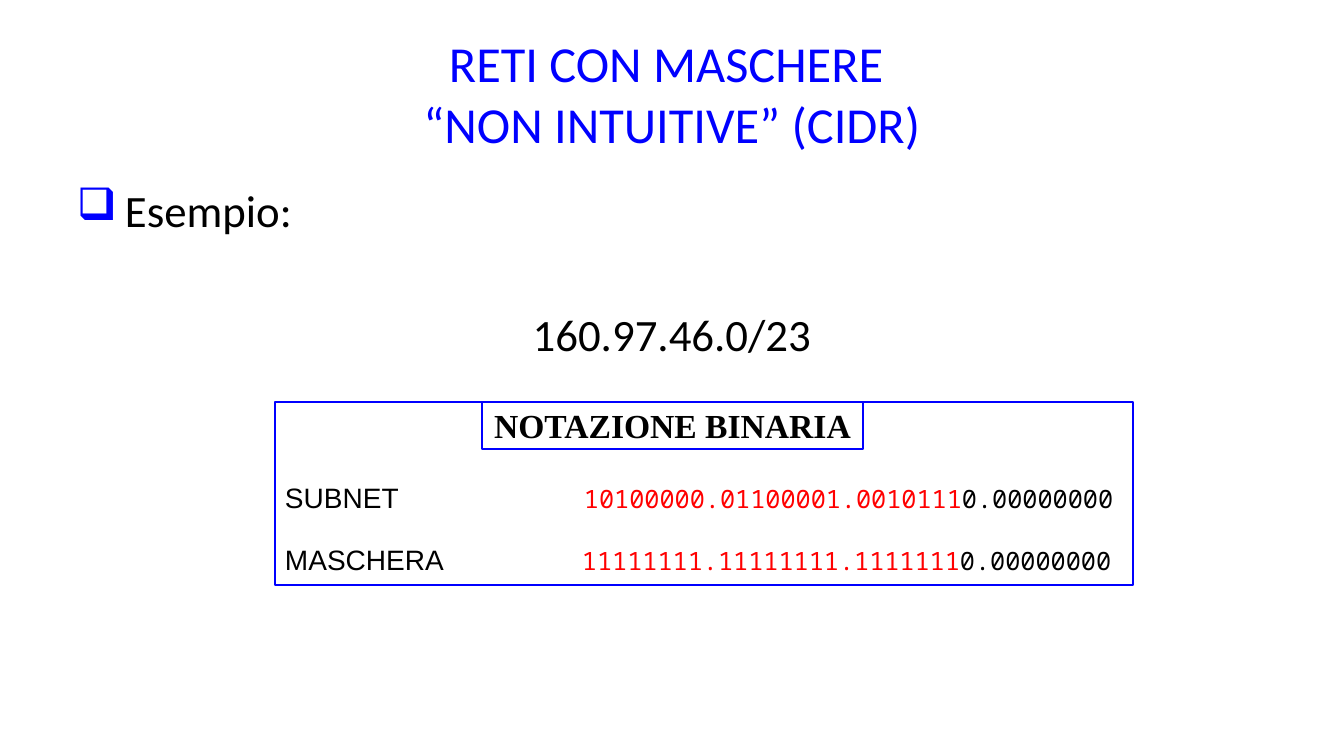
from lxml.etree import SubElement
from pptx import Presentation
from pptx.dml.color import RGBColor
from pptx.enum.shapes import MSO_SHAPE
from pptx.enum.text import MSO_ANCHOR, PP_ALIGN
from pptx.oxml.ns import qn
from pptx.util import Emu, Pt

SCALE = 914400 / 100.8
BLUE, RED, BLACK = "0000FF", "FF0000", "000000"
HEAD = dict(name="Calibri", size=Pt(36))
BODY = dict(name="Calibri", size=Pt(32))
LABEL = dict(name="Arial", size=Pt(20))
BITS = dict(name="Noto Sans Mono", size=Pt(18))
TAG = dict(name="Times New Roman", size=Pt(24), bold=True)
ROWS = [
    ("SUBNET", 299, "10100000.01100001.0010111", "0.00000000"),
    ("MASCHERA", 297, "11111111.11111111.1111111", "0.00000000"),
]


def px(num):
    return Emu(round(num * SCALE))


def hue(code):
    return RGBColor.from_string(code)


def put(item, style):
    """Set each value of a format dict on an item."""
    for key, value in style.items():
        setattr(item, key, value)


def write(para, text, style, color):
    run = para.add_run()
    run.text = text
    put(run.font, style)
    run.font.color.rgb = hue(color)


def area(slide, box, anchor):
    """Add a wrapping text box and return its frame."""
    frame = slide.shapes.add_textbox(*map(px, box)).text_frame
    put(frame, dict(word_wrap=True, vertical_anchor=anchor))
    return frame


def outline(slide, box):
    """Add a blue unfilled rectangle and return its frame."""
    shape = slide.shapes.add_shape(MSO_SHAPE.RECTANGLE, *map(px, box))
    shape.shadow.inherit = False
    shape.fill.background()
    shape.line.color.rgb = hue(BLUE)
    shape.line.width = Pt(2)
    return shape.text_frame


def title(slide, box):
    para = area(slide, box, MSO_ANCHOR.MIDDLE).paragraphs[0]
    para.alignment = PP_ALIGN.CENTER
    for num, line in enumerate(["RETI CON MASCHERE ", "“NON INTUITIVE” (CIDR)"]):
        if num:
            para.add_line_break()
        write(para, line, HEAD, BLUE)


def body(slide, box):
    frame = area(slide, box, MSO_ANCHOR.TOP)
    first = frame.paragraphs[0]
    props = first._p.get_or_add_pPr()
    props.set("marL", str(px(48)))
    props.set("indent", str(-px(48)))
    color = SubElement(props, qn("a:buClr"))
    SubElement(color, qn("a:srgbClr"), val=BLUE)
    SubElement(props, qn("a:buChar"), char="❑")
    write(first, "Esempio:", BODY, BLACK)
    net = frame.add_paragraph()
    put(net, dict(alignment=PP_ALIGN.CENTER, space_before=px(70)))
    write(net, "160.97.46.0/23", BODY, BLACK)


def binary(slide, box):
    """Place the framed bit rows and their heading tag."""
    frame = outline(slide, box)
    put(frame, dict(word_wrap=True, vertical_anchor=MSO_ANCHOR.TOP,
                    margin_left=px(10), margin_right=px(5),
                    margin_top=px(78), margin_bottom=0))
    for num, (name, stop, prefix, host) in enumerate(ROWS):
        para = frame.add_paragraph() if num else frame.paragraphs[0]
        tabs = SubElement(para._p.get_or_add_pPr(), qn("a:tabLst"))
        SubElement(tabs, qn("a:tab"), pos=str(px(stop)), algn="l")
        para.alignment = PP_ALIGN.LEFT
        if num:
            para.space_before = px(29)
        write(para, name + "\t", LABEL, BLACK)
        write(para, prefix, BITS, RED)
        write(para, host, BITS, BLACK)

    left, top = box[:2]
    tag = outline(slide, (left + 207, top, 381, 47))
    put(tag, dict(word_wrap=False, vertical_anchor=MSO_ANCHOR.MIDDLE))
    tag.paragraphs[0].alignment = PP_ALIGN.CENTER
    write(tag.paragraphs[0], "NOTAZIONE BINARIA", TAG, BLACK)


def main():
    deck = Presentation()
    put(deck, dict(slide_width=px(1344), slide_height=px(756)))
    slide = deck.slides.add_slide(deck.slide_layouts[6])
    title(slide, (67, 30, 1210, 126))
    body(slide, (67, 178, 1210, 497))
    binary(slide, (275, 402, 858, 183))
    deck.save("out.pptx")


if __name__ == "__main__":
    main()
